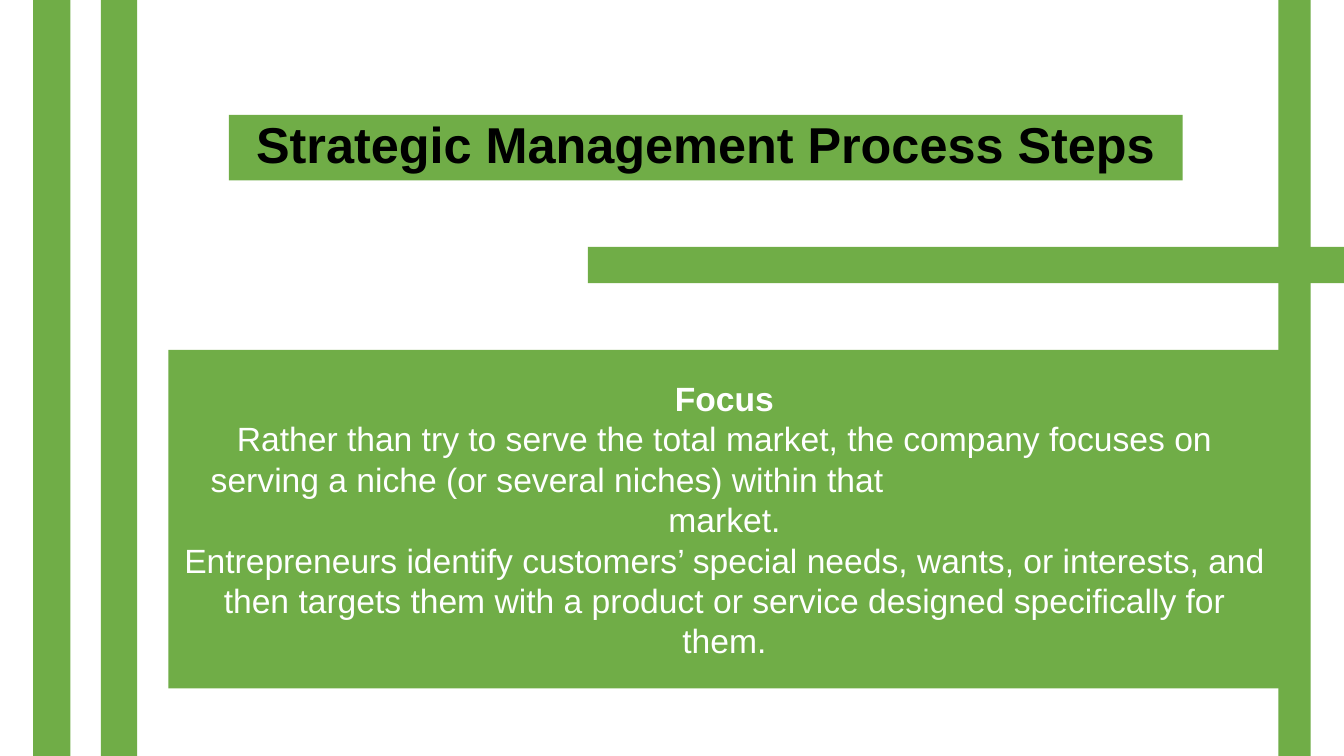
from pptx import Presentation
from pptx.dml.color import RGBColor
from pptx.enum.shapes import MSO_SHAPE
from pptx.enum.text import MSO_ANCHOR, MSO_AUTO_SIZE, PP_ALIGN
from pptx.util import Inches, Pt

GREEN = RGBColor(0x70, 0xAD, 0x47)
WHITE = RGBColor(0xFF, 0xFF, 0xFF)
BLACK = RGBColor(0x00, 0x00, 0x00)
RECTANGLE = MSO_SHAPE.RECTANGLE
CENTER, LEFT = PP_ALIGN.CENTER, PP_ALIGN.LEFT
MIDDLE = MSO_ANCHOR.MIDDLE
NO_AUTOFIT = MSO_AUTO_SIZE.NONE

WIDTH, HEIGHT = 13.33, 7.5
BAR = 0.36
BARS = [
    (0.33, 0, 0.37, HEIGHT),
    (1, 0, BAR, HEIGHT),
    (WIDTH - HEIGHT, 2.45, HEIGHT, BAR),
    (12.68, 0, 0.32, HEIGHT),
]
TITLE_BOX = (2.27, 1.14, 9.46, 0.65)
FOCUS_BOX = (1.67, 3.47, 11.03, 3.36)
TITLE_LINES = [("Strategic Management Process Steps", True, CENTER, 0)]
FOCUS_LINES = [
    ("Focus", True, CENTER, 0),
    ("Rather than try to serve the total market, the company focuses on",
     False, CENTER, 0),
    ("serving a niche (or several niches) within that", False, LEFT, 0.32),
    ("market.", False, CENTER, 0),
    ("Entrepreneurs identify customers’ special needs, wants, or interests, "
     "and then targets them with a product or service designed specifically "
     "for them.", False, CENTER, 0),
]


def apply_format(target, values):
    """Set every attribute in values on the target."""
    for name, value in values.items():
        setattr(target, name, value)


def fill_green(shape):
    """Give a shape the solid green of the slide."""
    shape.fill.solid()
    shape.fill.fore_color.rgb = GREEN


def draw_bars(page, boxes):
    """Draw the plain green bars that frame the page."""
    for box in boxes:
        bar = page.shapes.add_shape(RECTANGLE, *map(Inches, box))
        bar.shadow.inherit = False
        bar.line.fill.background()
        fill_green(bar)


def fill_panel(panel, box, lines, size, color, spacing):
    """Place a placeholder as a green panel and write its lines."""
    left, top, width, height = map(Inches, box)
    apply_format(panel, {"left": left, "top": top,
                         "width": width, "height": height})
    fill_green(panel)
    frame = panel.text_frame
    apply_format(frame, {"word_wrap": True, "auto_size": NO_AUTOFIT,
                         "vertical_anchor": MIDDLE})
    for index, (text, bold, alignment, indent) in enumerate(lines):
        para = frame.add_paragraph() if index else frame.paragraphs[0]
        apply_format(para, {"alignment": alignment, "line_spacing": spacing,
                            "space_before": Pt(0), "space_after": Pt(0)})
        if indent:
            para._p.get_or_add_pPr().set("marL", str(Inches(indent)))
        span = para.add_run()
        span.text = text
        apply_format(span.font, {"name": "Arial", "size": Pt(size), "bold": bold})
        span.font.color.rgb = color


def build_slide(deck):
    """Add the strategy slide with its bars, title and focus panel."""
    page = deck.slides.add_slide(deck.slide_layouts[0])
    draw_bars(page, BARS)
    title, focus = page.placeholders
    fill_panel(focus, FOCUS_BOX, FOCUS_LINES, 24, WHITE, Pt(28.85))
    fill_panel(title, TITLE_BOX, TITLE_LINES, 36, BLACK, 0.9)


def main():
    """Build and save the deck."""
    deck = Presentation()
    apply_format(deck, {"slide_width": Inches(WIDTH),
                        "slide_height": Inches(HEIGHT)})
    build_slide(deck)
    deck.save("out.pptx")


if __name__ == "__main__":
    main()
